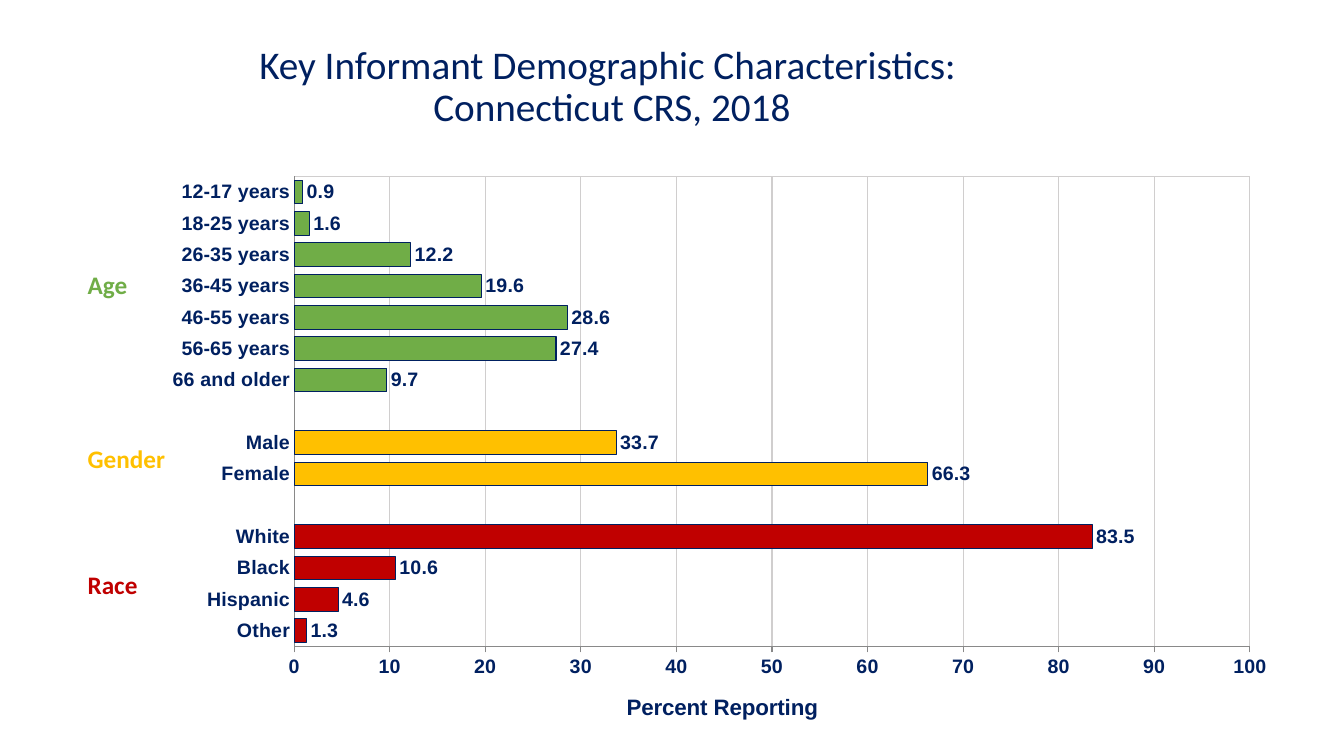
from dataclasses import dataclass

from lxml import etree
from pptx import Presentation
from pptx import util as u
from pptx.chart import data
from pptx.dml.color import RGBColor
from pptx.enum import chart as ch, text
from pptx.oxml import ns


@dataclass(frozen=True)
class Theme:
    navy: str = "002060"
    green: str = "70AD47"
    amber: str = "FFC000"
    red: str = "C00000"
    grid: str = "D0CECE"
    axis: str = "898989"
    heading_font: str = "Calibri"
    chart_font: str = "Arial"
    title_size: int = 28
    group_size: int = 18
    axis_title_size: int = 16
    label_size: int = 14


@dataclass(frozen=True)
class Box:
    """A region of the slide, in centimetres."""
    left: float
    top: float
    width: float
    height: float

    def lengths(self):
        return [u.Cm(v) for v in (self.left, self.top, self.width, self.height)]


THEME = Theme()
PLOT = Box(0.19, 0.083, 0.774, 0.79)  # shares of the chart's box
GROUPS = [
    ("Age", THEME.green, [("12-17 years", 0.9), ("18-25 years", 1.6), ("26-35 years", 12.2),
                          ("36-45 years", 19.6), ("46-55 years", 28.6), ("56-65 years", 27.4),
                          ("66 and older", 9.7)]),
    ("Gender", THEME.amber, [("Male", 33.7), ("Female", 66.3)]),
    ("Race", THEME.red, [("White", 83.5), ("Black", 10.6), ("Hispanic", 4.6), ("Other", 1.3)]),
]


def style(font, name, size, color, bold=False):
    font.name, font.size, font.bold = name, u.Pt(size), bold
    font.color.rgb = RGBColor.from_string(color)


def style_line(line, color):
    line.color.rgb = RGBColor.from_string(color)
    line.width = u.Pt(0.75)


def place_manually(parent, index, **settings):
    """Give a chart part a manual layout, as shares of the chart's box."""
    for old in parent.findall(ns.qn("c:layout")):
        parent.remove(old)
    layout = etree.Element(ns.qn("c:layout"))
    manual = etree.SubElement(layout, ns.qn("c:manualLayout"))
    for key, value in settings.items():
        etree.SubElement(manual, ns.qn("c:" + key), val=str(value))
    parent.insert(index, layout)


def outline_plot(plot_area, color):
    properties = etree.SubElement(plot_area, ns.qn("c:spPr"))
    etree.SubElement(properties, ns.qn("a:noFill"))
    line = etree.SubElement(properties, ns.qn("a:ln"), w=str(u.Pt(0.75)))
    fill = etree.SubElement(line, ns.qn("a:solidFill"))
    etree.SubElement(fill, ns.qn("a:srgbClr"), val=color)


def add_title(slide, box):
    frame = slide.shapes.add_textbox(*box.lengths()).text_frame
    frame.word_wrap = True
    heading = frame.paragraphs[0]
    heading.text = "Key Informant Demographic Characteristics: \vConnecticut CRS, 2018"
    heading.alignment = text.PP_ALIGN.CENTER
    heading.line_spacing = 0.9
    style(heading.font, THEME.heading_font, THEME.title_size, THEME.navy)


def chart_rows():
    """List (category, value, colour) from top to bottom, with a gap between groups."""
    rows = []
    for _, color, members in GROUPS:
        if rows:
            rows.append(("", None, None))
        rows += [(category, value, color) for category, value in members]
    return rows


def style_axes(chart):
    categories, percent = chart.category_axis, chart.value_axis
    for axis in (categories, percent):
        style(axis.tick_labels.font, THEME.chart_font, THEME.label_size, THEME.navy, True)
        style_line(axis.format.line, THEME.axis)
    categories.major_tick_mark = ch.XL_TICK_MARK.NONE
    categories.has_major_gridlines = False
    percent.minimum_scale, percent.maximum_scale, percent.major_unit = 0, 100, 10
    percent.major_tick_mark = ch.XL_TICK_MARK.OUTSIDE
    percent.tick_labels.number_format = "0"
    percent.tick_labels.number_format_is_linked = False
    style_line(percent.major_gridlines.format.line, THEME.grid)

    axis_title = percent.axis_title
    caption = axis_title.text_frame.paragraphs[0]
    caption.text = "Percent Reporting"
    style(caption.font, THEME.chart_font, THEME.axis_title_size, THEME.navy, True)
    place_manually(axis_title._element, 1, xMode="edge", yMode="edge", x=0.456, y=0.945)


def add_bars(slide, box):
    rows = chart_rows()[::-1]  # a bar chart counts from the bottom
    figures = data.CategoryChartData(number_format="0.0")
    figures.categories = [category for category, _, _ in rows]
    figures.add_series("Series 1", [value for _, value, _ in rows])
    chart = slide.shapes.add_chart(ch.XL_CHART_TYPE.BAR_CLUSTERED, *box.lengths(), figures).chart
    chart.has_legend = chart.has_title = False
    style(chart.font, THEME.chart_font, THEME.label_size, THEME.navy)
    style_axes(chart)

    bars = chart.plots[0]
    bars.gap_width, bars.overlap, bars.vary_by_categories = 33, 1, False
    series = bars.series[0]
    series.invert_if_negative = False
    series.format.fill.solid()
    series.format.fill.fore_color.rgb = RGBColor.from_string(THEME.green)
    style_line(series.format.line, THEME.navy)
    for index, (_, _, color) in enumerate(rows):
        if color not in (None, THEME.green):
            bar = series.points[index].format
            bar.fill.solid()
            bar.fill.fore_color.rgb = RGBColor.from_string(color)
            style_line(bar.line, THEME.navy)

    labels = series.data_labels
    labels.show_value = True
    labels.number_format, labels.number_format_is_linked = "0.0", False
    labels.position = ch.XL_LABEL_POSITION.OUTSIDE_END
    style(labels.font, THEME.chart_font, THEME.label_size, THEME.navy, True)

    plot_area = chart.element.find(".//" + ns.qn("c:plotArea"))
    place_manually(plot_area, 0, layoutTarget="inner", xMode="edge", yMode="edge",
                   x=PLOT.left, y=PLOT.top, w=PLOT.width, h=PLOT.height)
    outline_plot(plot_area, THEME.grid)


def add_group_names(slide, box):
    """Centre each group's name on its rows of the chart in the box."""
    row_height = box.height * PLOT.height / len(chart_rows())
    top = box.top + box.height * PLOT.top
    name_height = 1.03
    for name, color, members in GROUPS:
        middle = top + len(members) * row_height / 2
        name_box = Box(box.left + 0.46, middle - name_height / 2 - 0.05, 2.5, name_height)
        frame = slide.shapes.add_textbox(*name_box.lengths()).text_frame
        frame.word_wrap = False
        label = frame.paragraphs[0]
        label.text = name
        label.alignment = text.PP_ALIGN.LEFT
        style(label.font, THEME.heading_font, THEME.group_size, color, True)
        top += (len(members) + 1) * row_height


def main():
    deck = Presentation()
    deck.slide_width, deck.slide_height = u.Cm(33.87), u.Cm(19.05)
    slide = deck.slides.add_slide(deck.slide_layouts[6])
    chart_box = Box(1.5, 3.2, 31.12, 15.11)
    add_title(slide, Box(2.34, 1.02, 26.16, 3.68))
    add_bars(slide, chart_box)
    add_group_names(slide, chart_box)
    deck.save("out.pptx")


if __name__ == "__main__":
    main()
